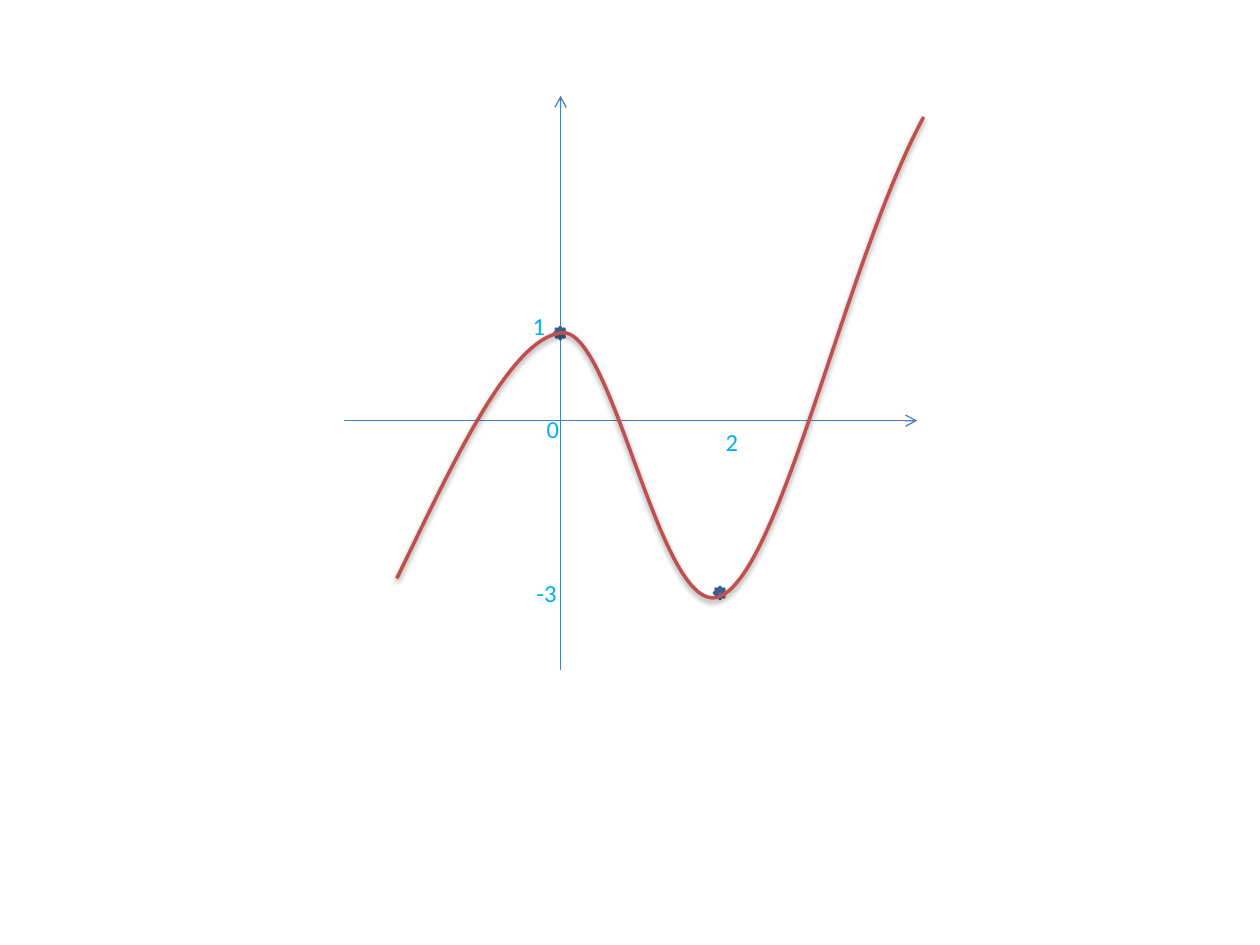
from pptx import Presentation
from pptx.dml.color import RGBColor as RGB
from pptx.enum.shapes import MSO_CONNECTOR as LINK, MSO_SHAPE as SHAPE
from pptx.enum.text import MSO_AUTO_SIZE as FIT
from pptx.oxml.ns import qn
from pptx.util import Cm, Pt
from lxml.etree import SubElement as Sub

HUES = {"axis": "4B7EBC", "dot": "4F81BD", "edge": "3A5F8C",
        "curve": "C0504D", "text": "00B0F0", "shade": "000000"}


def ink(line, hue, width):
    line.color.rgb = RGB.from_string(HUES[hue])
    line.width = Pt(width)


deck = Presentation()
deck.slide_width, deck.slide_height = Cm(25.4), Cm(19.05)
shapes = deck.slides.add_slide(deck.slide_layouts[6]).shapes

# Axes with arrows at the positive ends
for ends in [(6.93, 8.48, 18.49, 8.48), (11.3, 13.51, 11.3, 1.93)]:
    axis = shapes.add_connector(LINK.STRAIGHT, *map(Cm, ends))
    ink(axis.line, "axis", 0.75)
    Sub(axis.line._get_or_add_ln(), qn("a:tailEnd"), type="arrow")
    Sub(axis._element.spPr, qn("a:effectLst"))

# Turning points
for x, y in [(11.18, 6.6), (14.4, 11.84)]:
    dot = shapes.add_shape(SHAPE.SUN, Cm(x), Cm(y), Cm(0.23), Cm(0.23))
    dot.shadow.inherit = False
    dot.fill.solid()
    dot.fill.fore_color.rgb = RGB.from_string(HUES["dot"])
    ink(dot.line, "edge", 2)

# Cubic curve: start, then two control points and an end for each arc
start = (18.62, 2.36)
arcs = [
    [(17.07, 5.23), (15.8, 11.28), (14.58, 11.99)],
    [(13.36, 12.73), (12.4, 6.68), (11.35, 6.71)],
    [(10.29, 6.76), (9.07, 9.47), (8, 11.66)],
]
pen = shapes.build_freeform(Cm(start[0]), Cm(start[1]))
pen.add_line_segments([(Cm(x), Cm(y)) for *_, (x, y) in arcs], close=False)
curve = pen.convert_to_shape()
curve.fill.background()
ink(curve.line, "curve", 2)

# Bend the straight segments into arcs
steps = list(curve._element.iter(qn("a:lnTo")))
for step, arc in zip(steps, arcs):
    bend = step.makeelement(qn("a:cubicBezTo"))
    for x, y in arc:
        Sub(bend, qn("a:pt"), x=str(Cm(x) - curve.left),
            y=str(Cm(y) - curve.top))
    step.getparent().replace(step, bend)

# Soft shadow under the curve
curve.shadow.inherit = False
glow = curve._element.spPr.find(qn("a:effectLst"))
shade = Sub(glow, qn("a:outerShdw"), blurRad="40000", dist="20000",
            dir="5400000", rotWithShape="0")
tint = Sub(shade, qn("a:srgbClr"), val=HUES["shade"])
Sub(tint, qn("a:alpha"), val="38000")

# Axis labels
labels = [("1", 10.49, 6.15, 0.91), ("2", 14.38, 8.48, 1.35),
          ("-3", 10.57, 11.53, 0.91), ("0", 10.77, 8.23, 1.35)]
for text, x, y, width in labels:
    frame = shapes.add_textbox(Cm(x), Cm(y), Cm(width), Cm(0.86)).text_frame
    frame.word_wrap = True
    frame.auto_size = FIT.SHAPE_TO_FIT_TEXT
    frame.margin_right = 0
    frame.text = text
    font = frame.paragraphs[0].runs[0].font
    font.name, font.size = "Calibri", Pt(14)
    font.color.rgb = RGB.from_string(HUES["text"])

deck.save("out.pptx")
